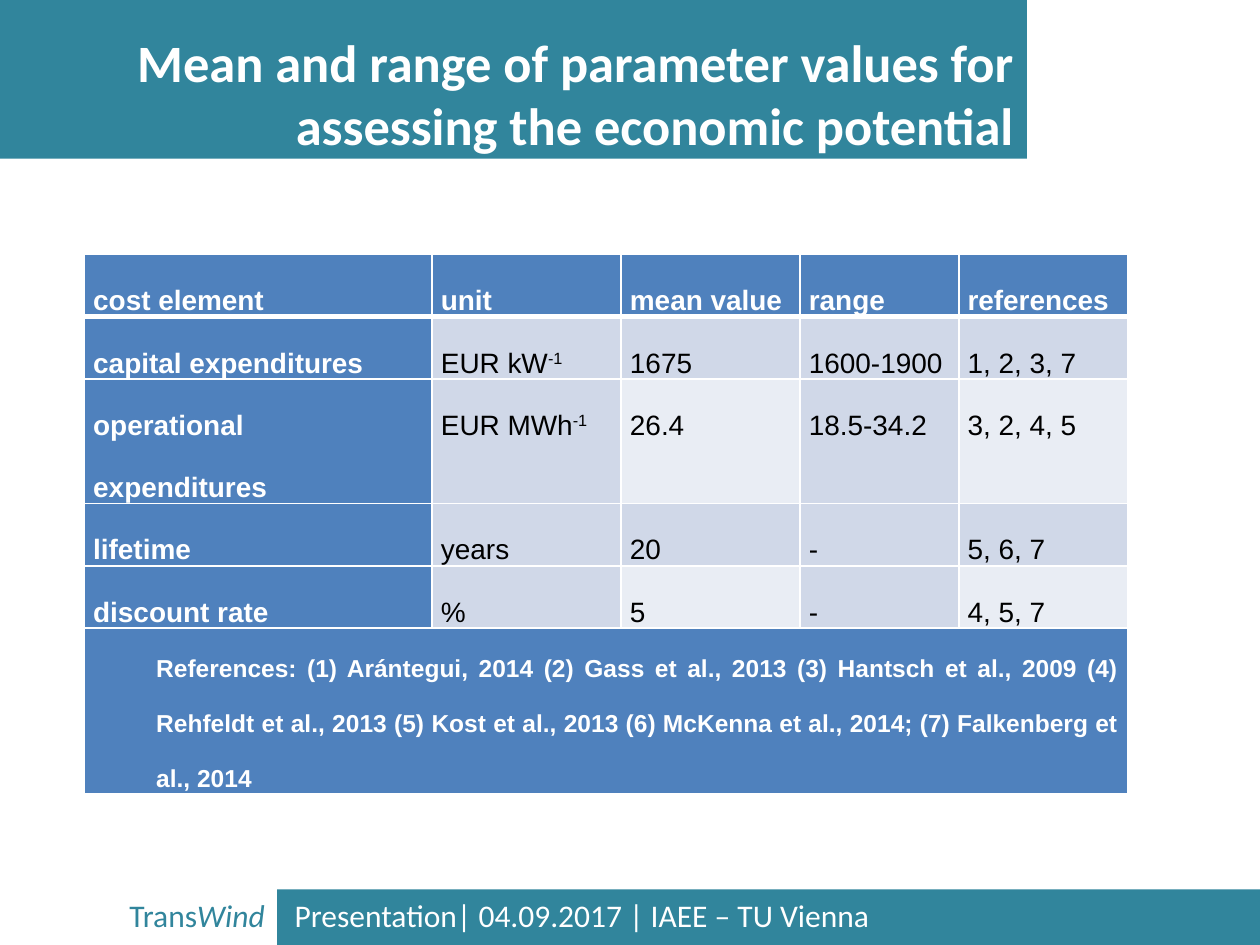
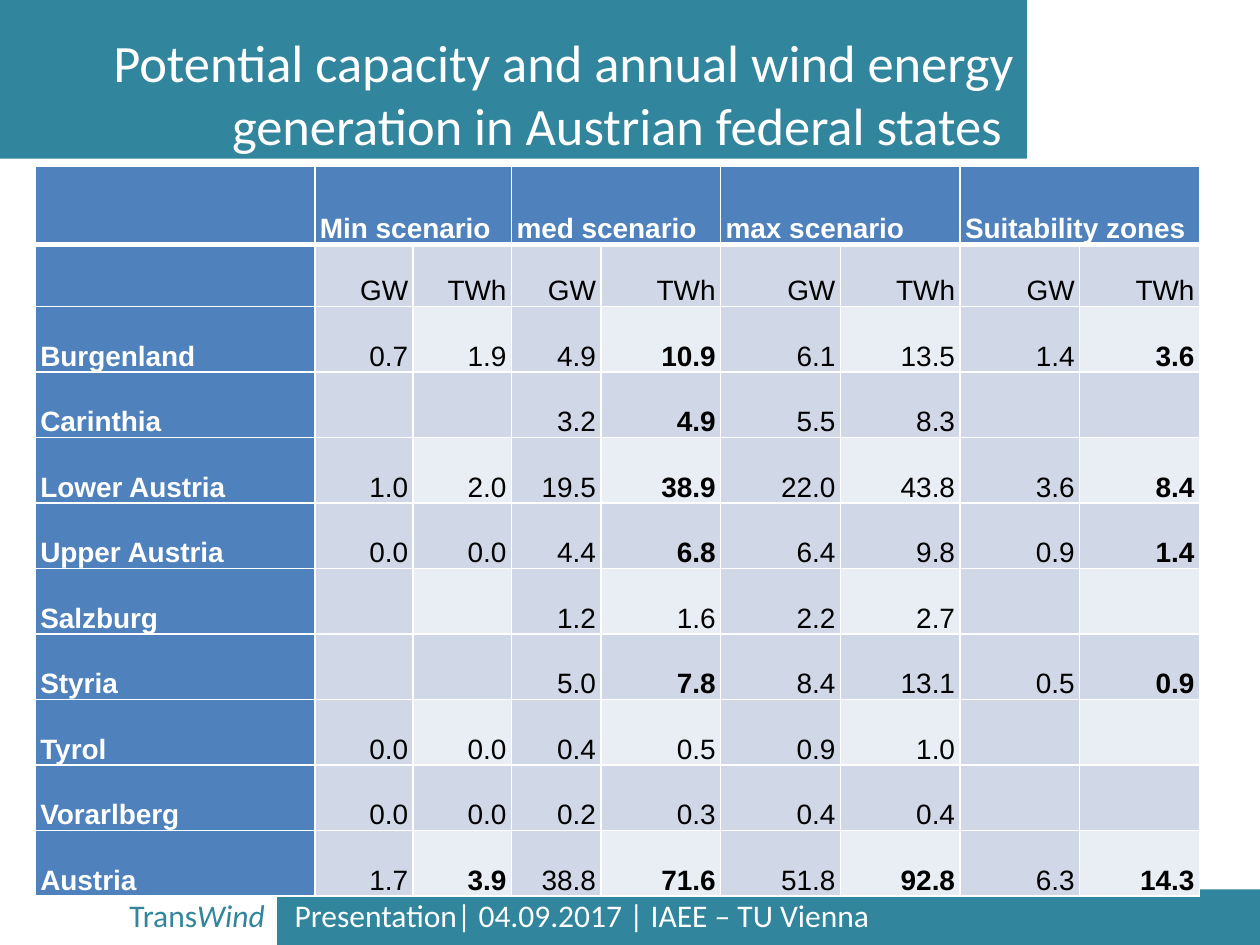
from dataclasses import dataclass

from lxml.etree import SubElement
from pptx import Presentation
from pptx.dml.color import RGBColor
from pptx.enum.shapes import MSO_SHAPE
from pptx.enum.text import MSO_ANCHOR, MSO_AUTO_SIZE, PP_ALIGN
from pptx.oxml.ns import qn
from pptx.util import Inches, Pt

COLORS = {
    "teal": "31859C",
    "blue": "4F81BD",
    "band_dark": "D0D8E8",
    "band_light": "E9EDF4",
    "white": "FFFFFF",
    "black": "000000",
}


@dataclass(frozen=True)
class Box:
    left: float
    top: float
    width: float
    height: float

    def lengths(self) -> list:
        return [Inches(value) for value in (self.left, self.top, self.width, self.height)]


@dataclass(frozen=True)
class Label:
    box: Box
    words: tuple
    color: str
    align: PP_ALIGN


@dataclass(frozen=True)
class TableStyle:
    anchor: MSO_ANCHOR
    side_margin: float
    label_align: PP_ALIGN
    value_align: PP_ALIGN


@dataclass(frozen=True)
class TableLayout:
    left: float
    top: float
    columns: list
    row_heights: list
    rows: list
    merges: list
    style: TableStyle


BANDS = [Box(2.2, 7.06, 7.8, 0.44), Box(0, 0, 8.15, 1.26)]
TITLE_BOX = Box(0, 0.21, 8.15, 1.05)
FOOTERS = [
    Label(Box(0.35, 7.06, 1.85, 0.4), ("Trans", "Wind"), "teal", PP_ALIGN.RIGHT),
    Label(Box(2.24, 7.06, 7.09, 0.4), ("Presentation| 04.09.2017 | IAEE – TU Vienna",),
          "white", PP_ALIGN.LEFT),
]

REFERENCES = (
    "References: (1) Arántegui, 2014 (2) Gass et al., 2013 (3) Hantsch et al., 2009 "
    "(4) Rehfeldt et al., 2013 (5) Kost et al., 2013 (6) McKenna et al., 2014; "
    "(7) Falkenberg et al., 2014"
)
COST_TABLE = TableLayout(
    0.67, 2.02,
    [2.76, 1.5, 1.42, 1.26, 1.34],
    [0.45, 0.45, 0.6, 0.45, 0.45, 1.19],
    [
        ["cost element", "unit", "mean value", "range ", "references"],
        ["capital expenditures", "EUR kW^-1", "1675", "1600-1900", "1, 2, 3, 7"],
        ["operational expenditures", "EUR MWh^-1", "26.4", "18.5-34.2", "3, 2, 4, 5"],
        ["lifetime", "years", "20", "-", "5, 6, 7"],
        ["discount rate", "%", "5", "-", "4, 5, 7"],
        [REFERENCES, "", "", "", ""],
    ],
    [(5, 0, 4)],
    TableStyle(MSO_ANCHOR.TOP, 0.07, PP_ALIGN.JUSTIFY, PP_ALIGN.JUSTIFY),
)

STATE_TABLE = TableLayout(
    0.28, 1.32,
    [2.22, 0.78, 0.78, 0.71] + [0.95] * 5,
    [0.62, 0.48] + [0.52] * 9,
    [
        ["", "Min scenario", "", "med scenario", "", "max scenario", "", "Suitability zones", ""],
        [""] + ["GW", "TWh"] * 4,
        ["Burgenland", "0.7", "1.9", "4.9", "*10.9", "6.1", "13.5", "1.4", "*3.6"],
        ["Carinthia", "", "", "3.2", "*4.9", "5.5", "8.3", "", ""],
        ["Lower Austria", "1.0", "2.0", "19.5", "*38.9", "22.0", "43.8", "3.6", "*8.4"],
        ["Upper Austria", "0.0", "0.0", "4.4", "*6.8", "6.4", "9.8", "0.9", "*1.4"],
        ["Salzburg", "", "", "1.2", "1.6", "2.2", "2.7", "", ""],
        ["Styria", "", "", "5.0", "*7.8", "8.4", "13.1", "0.5", "*0.9"],
        ["Tyrol", "0.0", "0.0", "0.4", "0.5", "0.9", "1.0", "", ""],
        ["Vorarlberg", "0.0", "0.0", "0.2", "0.3", "0.4", "0.4", "", ""],
        ["Austria", "1.7", "*3.9", "38.8", "*71.6", "51.8", "*92.8", "6.3", "*14.3"],
    ],
    [(0, column, column + 1) for column in range(1, 9, 2)],
    TableStyle(MSO_ANCHOR.BOTTOM, 0.04, PP_ALIGN.LEFT, PP_ALIGN.RIGHT),
)


def rgb(name: str) -> RGBColor:
    return RGBColor.from_string(COLORS[name])


def format_run(run, size: float, font_name: str, color: str, bold: bool = False) -> None:
    run.font.size = Pt(size)
    run.font.name = font_name
    run.font.bold = bold
    run.font.color.rgb = rgb(color)


def add_band(slide, box: Box) -> None:
    band = slide.shapes.add_shape(MSO_SHAPE.RECTANGLE, *box.lengths())
    band.shadow.inherit = False
    band.fill.solid()
    band.fill.fore_color.rgb = rgb("teal")
    band.line.fill.background()


def add_footer(slide, label: Label) -> None:
    text_frame = slide.shapes.add_textbox(*label.box.lengths()).text_frame
    text_frame.word_wrap = True
    text_frame.auto_size = MSO_AUTO_SIZE.SHAPE_TO_FIT_TEXT
    paragraph = text_frame.paragraphs[0]
    paragraph.alignment = label.align
    for index, word in enumerate(label.words):
        run = paragraph.add_run()
        run.text = word
        format_run(run, 18, "Calibri", label.color)
        run.font.italic = index > 0


def place_title(slide, text: str, bold: bool) -> None:
    title = slide.shapes.title
    title.left, title.top, title.width, title.height = TITLE_BOX.lengths()
    title.element.getparent().append(title.element)
    text_frame = title.text_frame
    text_frame.text = text
    text_frame.word_wrap = True
    text_frame.auto_size = MSO_AUTO_SIZE.NONE
    text_frame.vertical_anchor = MSO_ANCHOR.MIDDLE
    paragraph = text_frame.paragraphs[0]
    paragraph.alignment = PP_ALIGN.RIGHT
    format_run(paragraph.runs[0], 30, "Calibri", "white", bold)


def add_borders(cell, row: int) -> None:
    properties = cell._tc.get_or_add_tcPr()
    widths = {"a:lnL": 1, "a:lnR": 1, "a:lnT": 3 if row == 1 else 1, "a:lnB": 3 if row == 0 else 1}
    for position, (tag, width) in enumerate(widths.items()):
        line = SubElement(properties, qn(tag), w=str(Pt(width)))
        fill = SubElement(line, qn("a:solidFill"))
        SubElement(fill, qn("a:srgbClr"), val=COLORS["white"])
        properties.insert(position, line)


def fill_color(row: int, column: int, is_label: bool) -> str:
    if is_label:
        return "blue"
    return "band_light" if row % 2 == 0 and column % 2 == 0 else "band_dark"


def write_cell(cell, text: str, is_label: bool, align: PP_ALIGN, style: TableStyle) -> None:
    cell.vertical_anchor = style.anchor
    cell.margin_left = cell.margin_right = Inches(style.side_margin)
    cell.margin_top = cell.margin_bottom = 0
    paragraph = cell.text_frame.paragraphs[0]
    paragraph.alignment = align
    paragraph.line_spacing = 2.0
    size = 14 if text == REFERENCES else 16
    if text == REFERENCES:
        properties = paragraph._p.get_or_add_pPr()
        properties.set("marL", str(Inches(0.5)))
        properties.set("indent", "0")
    bold = is_label or text.startswith("*")
    for index, piece in enumerate(text.lstrip("*").split("^")):
        run = paragraph.add_run()
        run.text = piece
        format_run(run, size, "Arial", "white" if is_label else "black", bold)
        if index:
            run._r.get_or_add_rPr().set("baseline", "30000")


def add_data_table(slide, layout: TableLayout) -> None:
    box = Box(layout.left, layout.top, sum(layout.columns), sum(layout.row_heights))
    table = slide.shapes.add_table(len(layout.rows), len(layout.columns), *box.lengths()).table
    table.horz_banding = False
    for column, width in zip(table.columns, layout.columns):
        column.width = Inches(width)
    for row, height in zip(table.rows, layout.row_heights):
        row.height = Inches(height)
    for row, first, last in layout.merges:
        table.cell(row, first).merge(table.cell(row, last))
    for row, texts in enumerate(layout.rows):
        for column, text in enumerate(texts):
            cell = table.cell(row, column)
            is_label = row == 0 or column == 0
            cell.fill.solid()
            cell.fill.fore_color.rgb = rgb(fill_color(row, column, is_label))
            add_borders(cell, row)
            if text:
                align = layout.style.label_align if is_label else layout.style.value_align
                write_cell(cell, text, is_label, align, layout.style)


def add_table_slide(presentation, title: str, bold: bool, layout: TableLayout) -> None:
    slide = presentation.slides.add_slide(presentation.slide_layouts[5])
    for band in BANDS:
        add_band(slide, band)
    for footer in FOOTERS:
        add_footer(slide, footer)
    place_title(slide, title, bold)
    add_data_table(slide, layout)


def main() -> None:
    presentation = Presentation()
    presentation.slide_width = Inches(10)
    presentation.slide_height = Inches(7.5)
    add_table_slide(
        presentation,
        "Mean and range of parameter values for assessing the economic potential",
        True, COST_TABLE)
    add_table_slide(
        presentation,
        "Potential capacity and annual wind energy generation in Austrian federal states ",
        False, STATE_TABLE)
    presentation.save("out.pptx")


if __name__ == "__main__":
    main()
